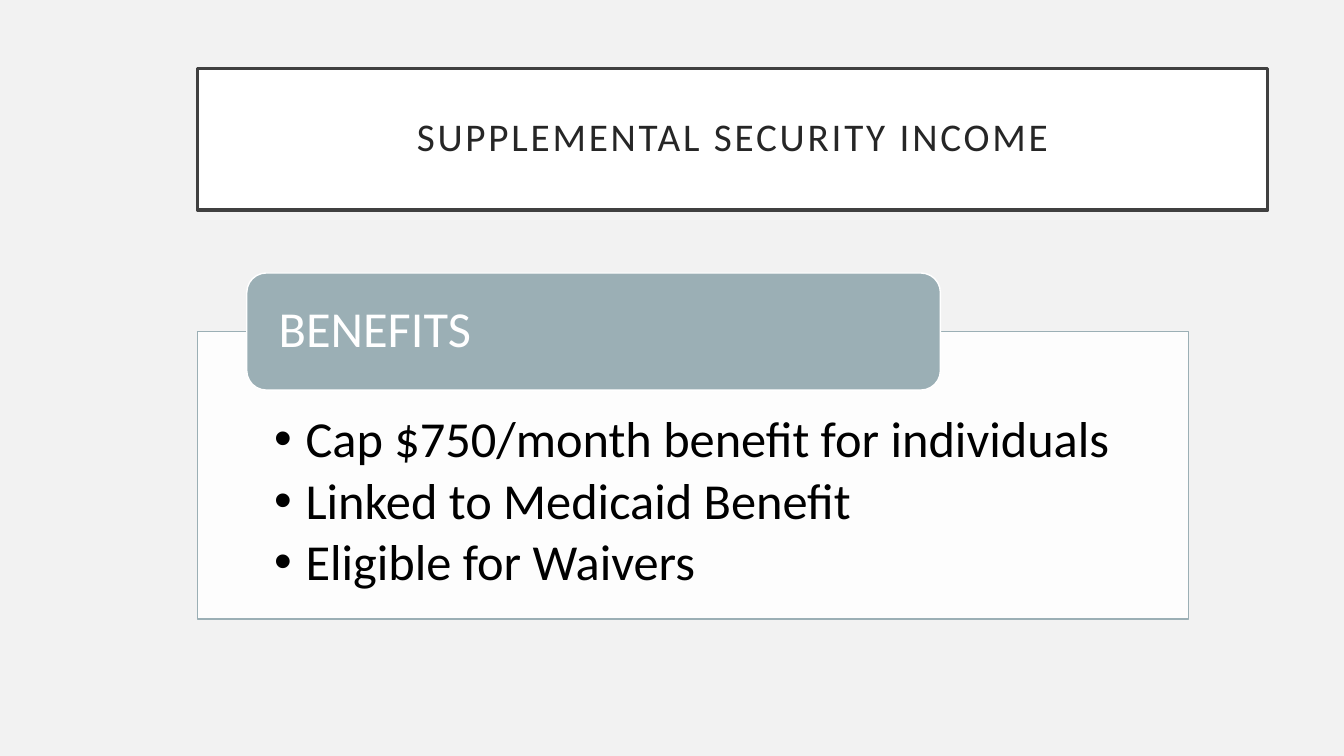
from lxml import etree
from pptx import Presentation
from pptx import util as u
from pptx.dml.color import RGBColor
from pptx.enum import shapes, text
from pptx.oxml import ns

STEEL = "9BAFB5"
WHITE = "FFFFFF"
LEFT = 4.98  # shared left edge of title and panel


def color(value):
    return RGBColor.from_string(value)


class SlideBuilder:
    font = "Calibri"

    def __init__(self, deck, background):
        self.page = deck.slides.add_slide(deck.slide_layouts[6])
        fill = self.page.background.fill
        fill.solid()
        fill.fore_color.rgb = color(background)

    def add_box(self, kind, place, fill, line, width, alpha=None):
        """Add a filled, outlined shape; place is left, top, width, height in cm."""
        box = self.page.shapes.add_shape(kind, *map(u.Cm, place))
        box.shadow.inherit = False
        box.fill.solid()
        box.fill.fore_color.rgb = color(fill)
        box.line.color.rgb = color(line)
        box.line.width = u.Pt(width)
        if alpha is not None:
            rgb = box._element.spPr.find(ns.qn("a:solidFill"))[0]
            etree.SubElement(rgb, ns.qn("a:alpha")).set("val", str(alpha * 1000))
        return box

    def add_lines(self, box, lines, margins, size, ink, anchor,
                  align=text.PP_ALIGN.LEFT, bullet=None, after=0, tracking=0):
        """Fill a shape with paragraphs; margins are left, top, right, bottom in cm."""
        frame = box.text_frame
        left, top, right, bottom = map(u.Cm, margins)
        frame_format = {"word_wrap": True, "vertical_anchor": anchor,
                        "margin_left": left, "margin_top": top,
                        "margin_right": right, "margin_bottom": bottom}
        for name, value in frame_format.items():
            setattr(frame, name, value)
        para_format = {"alignment": align, "line_spacing": 0.9,
                       "space_after": u.Pt(after)}
        span_format = {"name": self.font, "size": u.Pt(size)}

        for index, line in enumerate(lines):
            para = frame.add_paragraph() if index else frame.paragraphs[0]
            for name, value in para_format.items():
                setattr(para, name, value)
            if bullet:
                self.add_bullet(para, bullet)
            span = para.add_run()
            span.text = line
            for name, value in span_format.items():
                setattr(span.font, name, value)
            span.font.color.rgb = color(ink)
            if tracking:
                span._r.get_or_add_rPr().set("spc", str(tracking * 100))

    def add_bullet(self, para, mark):
        props = para._p.get_or_add_pPr()
        indent = u.Cm(0.79)
        props.set("marL", str(indent))
        props.set("indent", str(-indent))
        etree.SubElement(props, ns.qn("a:buFont")).set("typeface", "Arial")
        etree.SubElement(props, ns.qn("a:buChar")).set("char", mark)


def main():
    deck = Presentation()
    deck.slide_width, deck.slide_height = u.Cm(33.87), u.Cm(19.05)
    slide = SlideBuilder(deck, "F2F2F2")
    rectangle = shapes.MSO_SHAPE.RECTANGLE
    rounded = shapes.MSO_SHAPE.ROUNDED_RECTANGLE
    middle = text.MSO_ANCHOR.MIDDLE

    # Title
    title = slide.add_box(rectangle, (LEFT, 1.73, 26.97, 3.56), WHITE, "404040", 2.5)
    slide.add_lines(title, ["SUPPLEMENTAL SECURITY INCOME"], [0.51] * 4, 28, "262626",
                    middle, align=text.PP_ALIGN.CENTER, tracking=2)

    # Benefits panel
    panel = slide.add_box(rectangle, (LEFT, 8.36, 24.97, 7.24), WHITE, STEEL, 1, alpha=90)
    benefits = ["Cap $750/month benefit for individuals",
                "Linked to Medicaid Benefit",
                "Eligible for Waivers"]
    slide.add_lines(panel, benefits, (1.93, 2.08, 1.93, 0.71), 36, "000000",
                    text.MSO_ANCHOR.TOP, bullet="•", after=5)

    # Heading tab over the panel's top edge
    tab = slide.add_box(rounded, (6.22, 6.88, 17.48, 2.95), STEEL, WHITE, 1)
    slide.add_lines(tab, ["BENEFITS"], (0.66, 0, 0.66, 0), 36, WHITE, middle)

    deck.save("out.pptx")


if __name__ == "__main__":
    main()
